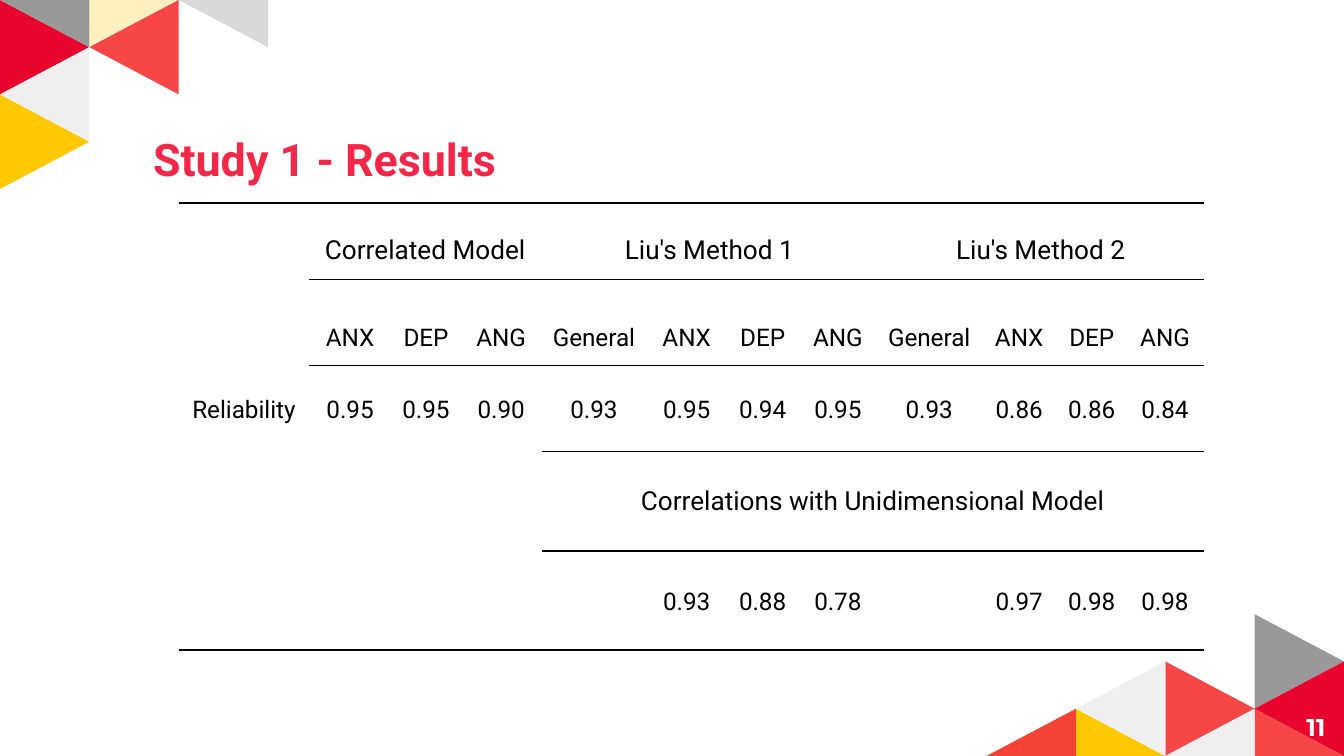
"""Build the Study 1 results slide with its reliability table."""
from lxml.etree import SubElement
from pptx import Presentation
from pptx.dml.color import RGBColor
from pptx.enum.text import MSO_ANCHOR, PP_ALIGN
from pptx.oxml import parse_xml
from pptx.oxml.ns import nsdecls, qn
from pptx.util import Inches, Pt

COLORS = {
    "black": "000000", "white": "FFFFFF", "title": "F42748", "crimson": "E8062F",
    "coral": "F64646", "orange": "F44336", "yellow": "FFC800",
    "pale": "EFEFEF", "silver": "D9D9D9", "gray": "999999",
}
PAGE_WIDTH = 10
PAGE_HEIGHT = PAGE_WIDTH * 9 / 16
STEP_X, STEP_Y = 1.33 / 2, PAGE_HEIGHT / 16
TOP_LEFT = (0, 0)
BOTTOM_RIGHT = (PAGE_WIDTH - 4 * STEP_X, PAGE_HEIGHT - 3 * STEP_Y)
TOP_LEFT_TRIANGLES = [
    ("crimson", [(0, 0), (0, 2), (1, 1)], 100),
    ("yellow", [(0, 2), (0, 4), (1, 3)], 100),
    ("yellow", [(1, 0), (1, 1), (2, 0)], 25),
    ("pale", [(1, 1), (0, 2), (1, 3)], 100),
    ("coral", [(2, 0), (1, 1), (2, 2)], 100),
    ("gray", [(0, 0), (1, 1), (1, 0)], 100),
    ("silver", [(3, 0), (3, 1), (2, 0)], 100),
]
BOTTOM_RIGHT_TRIANGLES = [
    ("gray", [(3, 0), (3, 2), (4, 1)], 100),
    ("yellow", [(1, 2), (1, 3), (2, 3)], 100),
    ("coral", [(2, 1), (2, 3), (3, 2)], 100),
    ("coral", [(3, 2), (3, 3), (4, 3)], 100),
    ("pale", [(2, 1), (1, 2), (2, 3)], 100),
    ("pale", [(3, 2), (2, 3), (3, 3)], 100),
    ("crimson", [(4, 1), (3, 2), (4, 3)], 100),
    ("orange", [(1, 2), (0, 3), (1, 3)], 100),
]
COLUMN_WIDTHS = [0.97, 0.61, 0.52, 0.6, 0.78, 0.6, 0.53, 0.59, 0.77, 0.57, 0.51, 0.58]
ROW_HEIGHTS = [0.57, 0.64, 0.64, 0.74, 0.74]
FACTORS = ["ANX", "DEP", "ANG"]
ROWS = [
    ["", "Correlated Model", "", "", "Liu's Method 1", "", "", "", "Liu's Method 2", "", "", ""],
    ["", *FACTORS, "General", *FACTORS, "General", *FACTORS],
    ["Reliability", "0.95", "0.95", "0.90", "0.93", "0.95", "0.94", "0.95",
     "0.93", "0.86", "0.86", "0.84"],
    ["", "", "", "", "Correlations with Unidimensional Model", "", "", "", "", "", "", ""],
    ["", "", "", "", "", "0.93", "0.88", "0.78", "", "0.97", "0.98", "0.98"],
]
SPANS = [(0, 1, 3), (0, 4, 7), (0, 8, 11), (3, 4, 11)]
RULE_STARTS = [0, 1, 1, 4, 4, 0]
ROW_FORMATS = [
    {"size": 14, "anchor": MSO_ANCHOR.BOTTOM, "line_spacing": 1.15, "space_after": Pt(10)},
    {"size": 13, "anchor": MSO_ANCHOR.BOTTOM, "space_after": Pt(10)},
    {"size": 13, "anchor": MSO_ANCHOR.MIDDLE, "line_spacing": 1.15, "space_after": Pt(10)},
    {"size": 14, "anchor": MSO_ANCHOR.MIDDLE},
    {"size": 13, "anchor": MSO_ANCHOR.MIDDLE, "line_spacing": 1.15, "space_after": Pt(10)},
]


def set_attributes(target, values):
    """Set each named attribute on the target."""
    for name, value in values.items():
        setattr(target, name, value)


def write_text(para, text, color, **font):
    """Add one run with its font values."""
    span = para.add_run()
    span.text = text
    set_attributes(span.font, font)
    span.font.color.rgb = RGBColor.from_string(COLORS[color])


def add_triangle(page, origin, color, corners, opacity):
    """Draw a triangle whose corners lie on the decoration grid."""
    points = [(Inches(origin[0] + x * STEP_X), Inches(origin[1] + y * STEP_Y))
              for x, y in corners]
    builder = page.shapes.build_freeform(*points[0])
    builder.add_line_segments(points[1:], close=True)
    triangle = builder.convert_to_shape()
    triangle.shadow.inherit = False
    triangle.line.fill.background()
    triangle.fill.solid()
    triangle.fill.fore_color.rgb = RGBColor.from_string(COLORS[color])
    if opacity < 100:
        fill_color = triangle.fill._xPr.find(qn("a:solidFill"))[0]
        SubElement(fill_color, qn("a:alpha"), val=str(opacity * 1000))


def add_label(page, place, text, color, anchor, align, **font):
    """Add a one-line text box."""
    frame = page.shapes.add_textbox(*map(Inches, place)).text_frame
    margins = {f"margin_{side}": Inches(0.1) for side in ("left", "right", "top", "bottom")}
    set_attributes(frame, {"word_wrap": True, "vertical_anchor": anchor, **margins})
    frame.paragraphs[0].alignment = align
    write_text(frame.paragraphs[0], text, color, **font)


def set_borders(cell, ruled_sides):
    """Rule the given sides of a cell and clear the others."""
    properties = cell._tc.get_or_add_tcPr()
    for position, side in enumerate("LRTB"):
        fill = "<a:noFill/>"
        if side in ruled_sides:
            fill = f'<a:solidFill><a:srgbClr val="{COLORS["black"]}"/></a:solidFill>'
        border = f'<a:ln{side} {nsdecls("a")} w="{Pt(1)}">{fill}</a:ln{side}>'
        properties.insert(position, parse_xml(border))


def format_cell(cell, text, values):
    """Set the layout and text of a table cell."""
    set_attributes(cell, {
        "margin_left": Inches(0.07), "margin_right": Inches(0.07),
        "margin_top": Inches(0.1), "margin_bottom": Inches(0.1),
        "vertical_anchor": values["anchor"],
    })
    cell.fill.background()
    if text:
        para = cell.text_frame.paragraphs[0]
        spacing = {name: values[name] for name in ("line_spacing", "space_after") if name in values}
        set_attributes(para, {"alignment": PP_ALIGN.CENTER, **spacing})
        write_text(para, text, "black", name="Roboto", size=Pt(values["size"]))


def add_results_table(page):
    """Add the reliability table with its horizontal rules."""
    place = map(Inches, (1.33, 1.51, sum(COLUMN_WIDTHS), sum(ROW_HEIGHTS)))
    table = page.shapes.add_table(len(ROWS), len(COLUMN_WIDTHS), *place).table
    set_attributes(table, {"first_row": False, "horz_banding": False})
    for column, width in zip(table.columns, COLUMN_WIDTHS):
        column.width = Inches(width)
    for row, height in zip(table.rows, ROW_HEIGHTS):
        row.height = Inches(height)
    for row, first, last in SPANS:
        table.cell(row, first).merge(table.cell(row, last))
    for row, texts in enumerate(ROWS):
        for column, text in enumerate(texts):
            cell = table.cell(row, column)
            format_cell(cell, text, ROW_FORMATS[row])
            set_borders(cell, [side for side, rule in (("T", row), ("B", row + 1))
                               if column >= RULE_STARTS[rule]])


def main():
    """Build and save the slide."""
    deck = Presentation()
    set_attributes(deck, {"slide_width": Inches(PAGE_WIDTH), "slide_height": Inches(PAGE_HEIGHT)})
    page = deck.slides.add_slide(deck.slide_layouts[6])
    for origin, triangles in ((BOTTOM_RIGHT, BOTTOM_RIGHT_TRIANGLES),
                              (TOP_LEFT, TOP_LEFT_TRIANGLES)):
        for triangle in triangles:
            add_triangle(page, origin, *triangle)
    add_label(page, (9.36, 5.19, 0.6, 0.43), "11", "white", MSO_ANCHOR.MIDDLE,
              PP_ALIGN.RIGHT, name="Montserrat", size=Pt(13), bold=True)
    add_label(page, (1.04, 0.88, 7.91, 0.73), "Study 1 - Results", "title", MSO_ANCHOR.TOP,
              PP_ALIGN.LEFT, name="Roboto", size=Pt(24), bold=True)
    add_results_table(page)
    deck.save("out.pptx")


if __name__ == "__main__":
    main()
